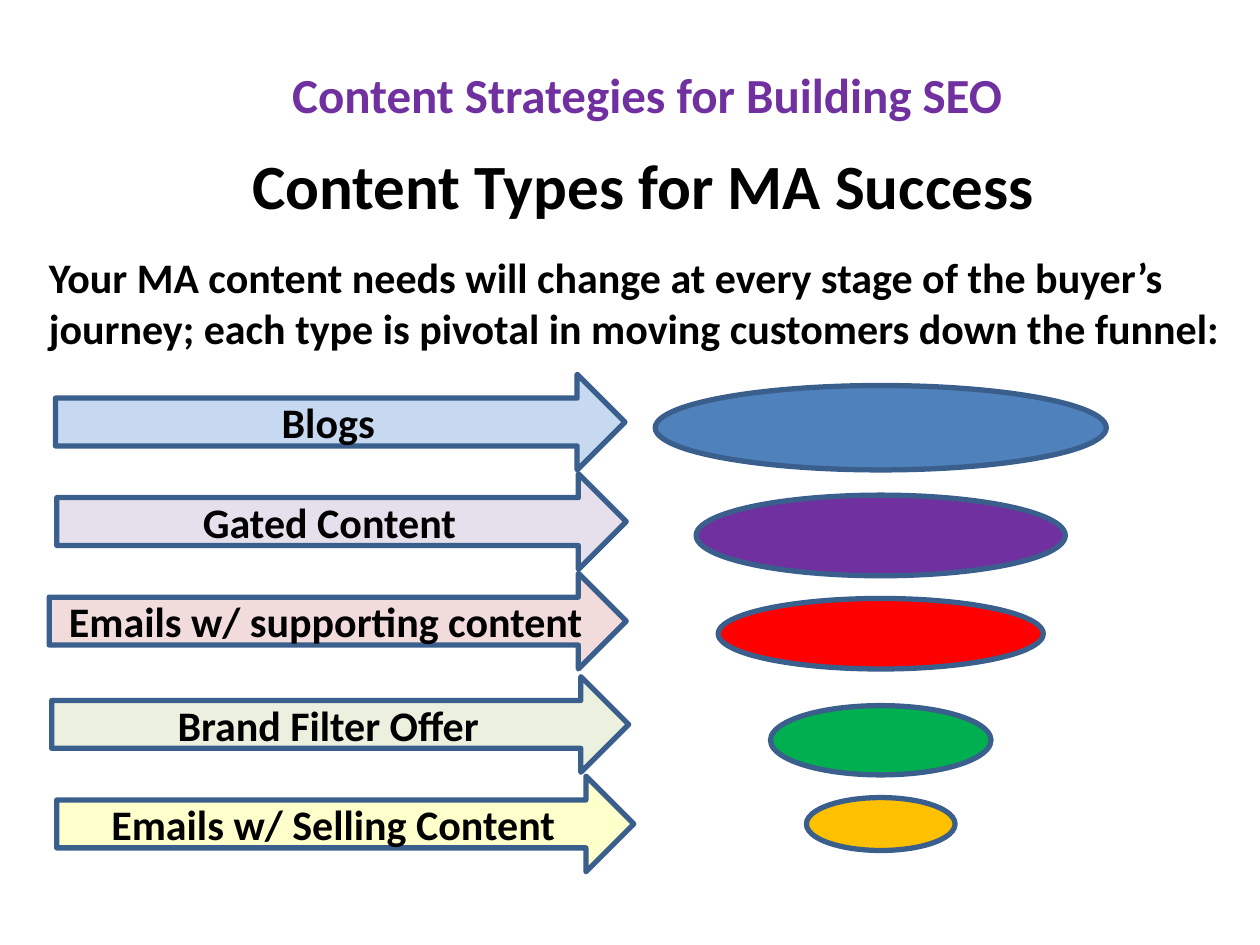
from collections import namedtuple

from pptx import Presentation
from pptx.dml.color import RGBColor
from pptx.enum.shapes import MSO_SHAPE as Preset
from pptx.enum.text import MSO_ANCHOR as Anchor, MSO_AUTO_SIZE as AutoSize, PP_ALIGN as Align
from pptx.util import Inches, Pt

# The page is a grid of 100 columns by 75 rows
COLUMNS, ROWS = 100, 75
PAGE_WIDTH, PAGE_HEIGHT = Inches(10), Inches(7.5)
FONT = "Calibri"

COLORS = {
    "black": "000000", "purple": "7030A0", "outline": "3A5F8C",
    "pale blue": "C6D9F1", "pale purple": "E6E0EC", "pale red": "F2DCDB",
    "pale green": "EBF1DE", "pale yellow": "FFFFCC",
    "blue": "4F81BD", "red": "FF0000", "green": "00B050", "gold": "FFC000",
}

Box = namedtuple("Box", "left top width height")
Arrow = namedtuple("Arrow", "label tint left top width")
Ring = namedtuple("Ring", "color top width height")

# Offsets are grid units from the top left of each region
ARROWS = [
    Arrow("Blogs", "pale blue", 0.5, 0, 45.2),
    Arrow("Gated Content", "pale purple", 0.6, 7.9, 45.2),
    Arrow("Emails w/ supporting content", "pale red", 0, 15.8, 45.8),
    Arrow("Brand Filter Offer", "pale green", 0.2, 24, 45.8),
    Arrow("Emails w/ Selling Content", "pale yellow", 0.6, 31.9, 45.8),
]
ARROW_HEIGHT = 7.6
RINGS = [
    Ring("blue", 0, 35.8, 6.7),
    Ring("purple", 8.7, 29.3, 6.4),
    Ring("red", 16.9, 25.8, 5.6),
    Ring("green", 25.4, 17.5, 5.5),
    Ring("gold", 32.7, 11.8, 4.2),
]


def rgb(name):
    return RGBColor.from_string(COLORS[name])


def place(box):
    """Turn a box in grid units into page lengths."""
    across, down = PAGE_WIDTH / COLUMNS, PAGE_HEIGHT / ROWS
    return [round(length) for length in (box.left * across, box.top * down,
                                         box.width * across, box.height * down)]


def write(shape, text, size=24, color="black", align=Align.LEFT,
          anchor=Anchor.TOP, wrap=True, after=0):
    frame = shape.text_frame
    frame.auto_size = AutoSize.NONE
    frame.word_wrap = wrap
    frame.vertical_anchor = anchor
    para = frame.paragraphs[0]
    para.alignment = align
    para.space_after = Pt(after)
    span = para.add_run()
    span.text = text
    span.font.name = FONT
    span.font.size = Pt(size)
    span.font.bold = True
    span.font.color.rgb = rgb(color)


def add_outlined(page, preset, box, fill):
    shape = page.shapes.add_shape(preset, *place(box))
    shape.shadow.inherit = False
    shape.fill.solid()
    shape.fill.fore_color.rgb = rgb(fill)
    shape.line.color.rgb = rgb("outline")
    shape.line.width = Pt(3)
    return shape


def add_heading(page, box):
    # Topic line above, title below
    topic = page.shapes.add_textbox(*place(box._replace(height=9.8)))
    write(topic, "Content Strategies for Building SEO", size=28,
          color="purple", align=Align.CENTER)
    title = page.shapes.title
    title.left, title.top, title.width, title.height = place(
        Box(box.left + 6, box.top + 6.5, 64.7, 7.1))
    write(title, "Content Types for MA Success", size=36, wrap=False)


def add_introduction(page, box):
    introduction = page.shapes.add_textbox(*place(box))
    write(introduction, "Your MA content needs will change at every stage of the "
          "buyer’s journey; each type is pivotal in moving customers down the "
          "funnel:", after=12)


def add_funnel(page, box):
    # Rings share one vertical centre line
    for ring in RINGS:
        left = box.left + (box.width - ring.width) / 2
        add_outlined(page, Preset.OVAL,
                     Box(left, box.top + ring.top, ring.width, ring.height), ring.color)


def add_stages(page, box):
    for arrow in ARROWS:
        shape = add_outlined(page, Preset.RIGHT_ARROW,
                             Box(box.left + arrow.left, box.top + arrow.top,
                                 arrow.width, ARROW_HEIGHT), arrow.tint)
        write(shape, arrow.label, align=Align.CENTER, anchor=Anchor.MIDDLE)


def main():
    deck = Presentation()
    deck.slide_width, deck.slide_height = PAGE_WIDTH, PAGE_HEIGHT
    page = deck.slides.add_slide(deck.slide_layouts[5])
    add_introduction(page, Box(2.9, 19.5, 95, 31))
    add_heading(page, Box(13, 4.6, 76.7, 13.6))
    add_funnel(page, Box(52, 30.6, 35.8, 36.9))
    add_stages(page, Box(3.9, 29.7, 46.4, 39.5))
    deck.save("out.pptx")


if __name__ == "__main__":
    main()
